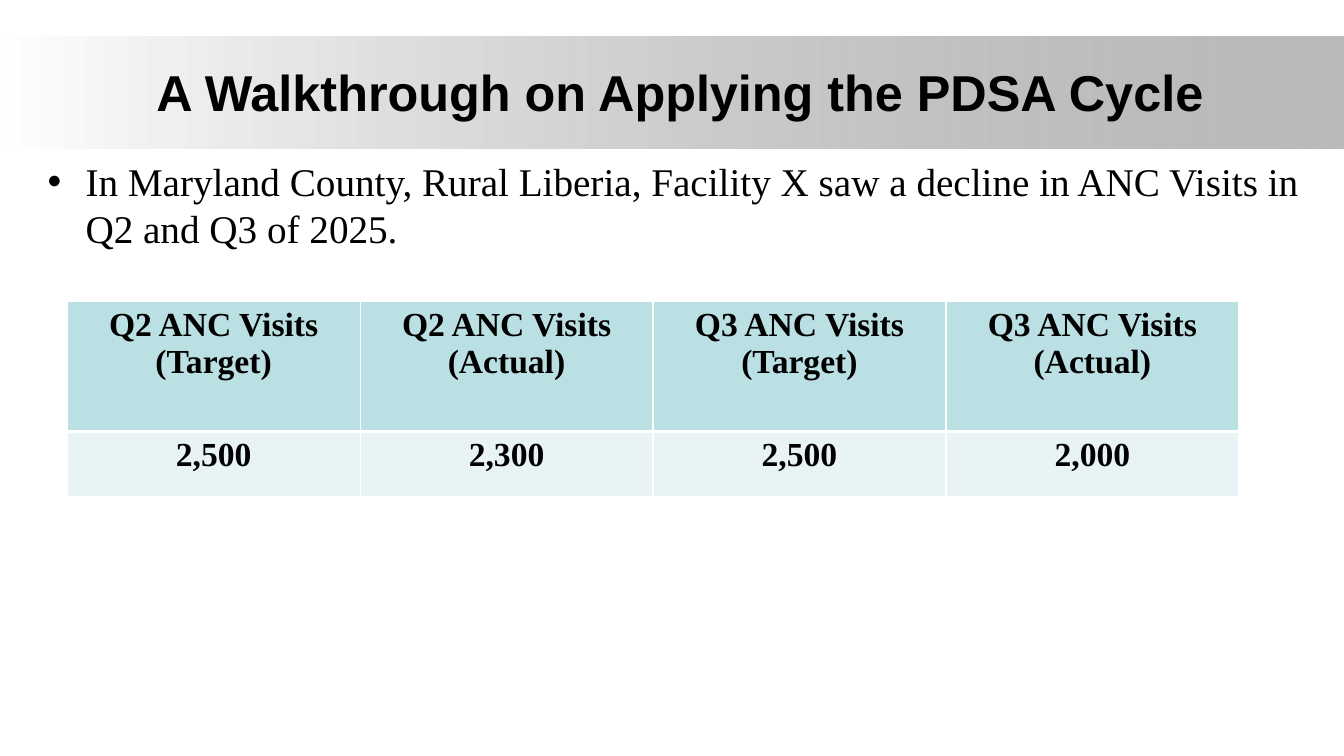
from dataclasses import dataclass

from lxml.etree import SubElement
from pptx import Presentation
from pptx.dml.color import RGBColor
from pptx.enum.shapes import MSO_SHAPE
from pptx.enum.text import MSO_ANCHOR, PP_ALIGN
from pptx.oxml.ns import qn
from pptx.util import Pt

PX = 9525  # EMU in one px, 96 px to the inch


@dataclass(frozen=True)
class Theme:
    heading_font: str = "Arial"
    body_font: str = "Times New Roman"
    title_size: int = 36
    body_size: int = 28
    table_size: int = 24
    ink: str = "000000"
    paper: str = "FFFFFF"
    band_end: str = "808080"
    header_fill: str = "BBE0E3"
    value_fill: str = "E7F3F4"


THEME = Theme()


def px(*lengths):
    return [length * PX for length in lengths]


def write_text(frame, text, font=THEME.body_font, size=THEME.body_size,
               bold=False, align=PP_ALIGN.LEFT, bullet=None, indent=0):
    frame.word_wrap = True
    paragraph = frame.paragraphs[0]
    paragraph.alignment = align
    if bullet:
        properties = paragraph._p.get_or_add_pPr()
        properties.set("marL", str(indent * PX))
        properties.set("indent", str(-indent * PX))
        SubElement(properties, qn("a:buFont"), typeface=THEME.heading_font)
        SubElement(properties, qn("a:buChar"), char=bullet)
    run = paragraph.add_run()
    run.text = text
    run.font.name = font
    run.font.size = Pt(size)
    run.font.bold = bold
    run.font.color.rgb = RGBColor.from_string(THEME.ink)


def border_cell(cell, **widths):
    """Draw cell borders; the keywords L, R, T, B give widths in points."""
    properties = cell._tc.get_or_add_tcPr()
    for index, (side, width) in enumerate(widths.items()):
        line = properties.makeelement(qn(f"a:ln{side}"), {"w": str(Pt(width))})
        fill = SubElement(line, qn("a:solidFill"))
        SubElement(fill, qn("a:srgbClr"), val=THEME.paper)
        properties.insert(index, line)


def add_title_band(slide, left, top, width, height):
    # Band fading in from the left
    band = slide.shapes.add_shape(MSO_SHAPE.RECTANGLE, *px(left, top, width, height))
    band.shadow.inherit = False
    band.line.fill.background()
    band.fill.gradient()
    band.fill.gradient_angle = 0
    start, end = band.fill.gradient_stops
    for stop, position, color in ((start, 0, THEME.paper), (end, 1, THEME.band_end)):
        stop.position = position
        stop.color.rgb = RGBColor.from_string(color)
    end_color = band.fill._xPr.findall(".//" + qn("a:srgbClr"))[-1]
    SubElement(end_color, qn("a:alpha"), val="54000")

    # Title
    title = slide.shapes.add_textbox(*px(left + 72, top + 15, width - 128, 74))
    title.text_frame.vertical_anchor = MSO_ANCHOR.MIDDLE
    write_text(title.text_frame, "A Walkthrough on Applying the PDSA Cycle",
               font=THEME.heading_font, size=THEME.title_size, bold=True,
               align=PP_ALIGN.CENTER)


def add_body(slide, left, top, width, height):
    body = slide.shapes.add_textbox(*px(left, top, width, height))
    write_text(body.text_frame,
               "In Maryland County, Rural Liberia, Facility X saw a decline "
               "in ANC Visits in Q2 and Q3 of 2025.", bullet="•", indent=36)


def add_visits_table(slide, left, top, width, height):
    headers = [f"{quarter} ANC Visits ({measure})"
               for quarter in ("Q2", "Q3") for measure in ("Target", "Actual")]
    values = ["2,500", "2,300", "2,500", "2,000"]
    rows = (
        (headers, THEME.header_fill, dict(L=1, R=1, T=1, B=3)),
        (values, THEME.value_fill, dict(L=1, R=1, T=3, B=1)),
    )
    table = slide.shapes.add_table(len(rows), len(headers),
                                   *px(left, top, width, height)).table
    # The header row is twice as high as the value row
    table.rows[0].height, table.rows[1].height = px(height * 2 // 3, height // 3)
    for row, (texts, fill, borders) in enumerate(rows):
        for column, text in enumerate(texts):
            cell = table.cell(row, column)
            cell.fill.solid()
            cell.fill.fore_color.rgb = RGBColor.from_string(fill)
            border_cell(cell, **borders)
            write_text(cell.text_frame, text, size=THEME.table_size, bold=True,
                       align=PP_ALIGN.CENTER)


def main():
    presentation = Presentation()
    presentation.slide_width, presentation.slide_height = px(1280, 720)
    slide = presentation.slides.add_slide(presentation.slide_layouts[6])
    add_title_band(slide, 0, 35, 1280, 106)
    add_body(slide, 36, 145, 1213, 540)
    add_visits_table(slide, 64, 287, 1116, 187)
    presentation.save("out.pptx")


if __name__ == "__main__":
    main()
